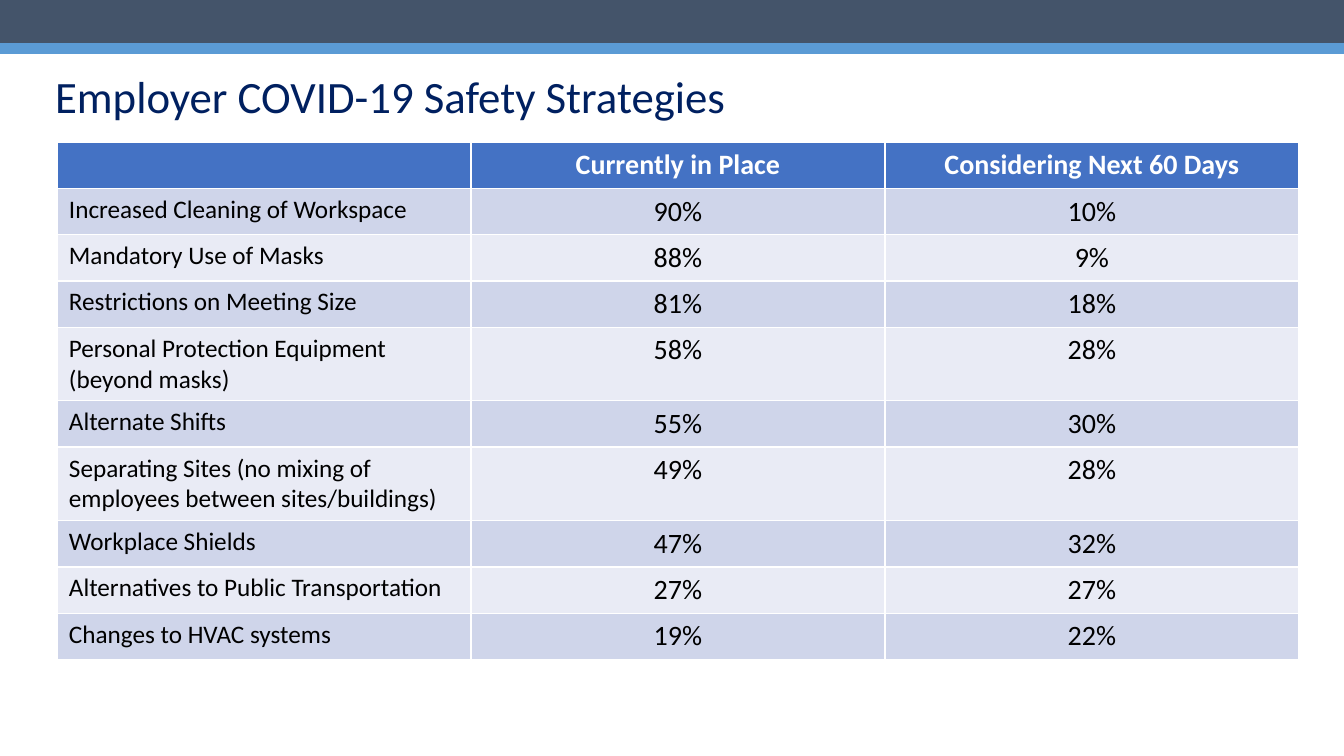
from pptx import Presentation
from pptx.dml.color import RGBColor
from pptx.enum.shapes import MSO_SHAPE
from pptx.enum.text import MSO_ANCHOR, PP_ALIGN
from pptx.util import Emu, Pt

FONT = "Calibri"
SLATE = RGBColor(0x44, 0x54, 0x6A)
SKY = RGBColor(0x5B, 0x9B, 0xD5)
NAVY = RGBColor(0x00, 0x20, 0x60)
HEADER = RGBColor(0x44, 0x72, 0xC4)
BAND_DARK = RGBColor(0xCF, 0xD5, 0xEA)
BAND_LIGHT = RGBColor(0xE9, 0xEB, 0xF5)
WHITE = RGBColor(0xFF, 0xFF, 0xFF)
BLACK = RGBColor(0x00, 0x00, 0x00)

ROWS = [
    ("", "Currently in Place", "Considering Next 60 Days"),
    ("Increased Cleaning of Workspace", "90%", "10%"),
    ("Mandatory Use of Masks", "88%", "9%"),
    ("Restrictions on Meeting Size", "81%", "18%"),
    ("Personal Protection Equipment (beyond masks)", "58%", "28%"),
    ("Alternate Shifts", "55%", "30%"),
    ("Separating Sites (no mixing of employees between sites/buildings)", "49%", "28%"),
    ("Workplace Shields", "47%", "32%"),
    ("Alternatives to Public Transportation", "27%", "27%"),
    ("Changes to HVAC systems", "19%", "22%"),
]
TWO_LINE_ROWS = (4, 6)


def px(n):
    return Emu(round(n * 914400 / 100.8))


def add_run(p, text, size, color, bold=False):
    r = p.add_run()
    r.text = text
    r.font.name = FONT
    r.font.size = Pt(size)
    r.font.bold = bold
    r.font.color.rgb = color


prs = Presentation()
prs.slide_width, prs.slide_height = px(1344), px(756)
s = prs.slides.add_slide(prs.slide_layouts[5])

# Top bands
for top, height, color in ((0, 43, SLATE), (43, 11, SKY)):
    band = s.shapes.add_shape(MSO_SHAPE.RECTANGLE, 0, px(top), px(1344), px(height))
    band.shadow.inherit = False
    band.fill.solid()
    band.fill.fore_color.rgb = color
    band.line.fill.background()

# Title
title = s.shapes.title
title.left, title.top, title.width, title.height = px(45), px(26), px(1344), px(146)
tf = title.text_frame
tf.vertical_anchor = MSO_ANCHOR.MIDDLE
p = tf.paragraphs[0]
p.alignment = PP_ALIGN.LEFT
p.line_spacing = 0.9
add_run(p, "Employer COVID-19 Safety Strategies", 32, NAVY)

# Strategy table
heights = [73 if i in TWO_LINE_ROWS else 45 for i in range(len(ROWS))]
table = s.shapes.add_table(len(ROWS), 3, px(57), px(142), px(1242), px(sum(heights))).table
for column in table.columns:
    column.width = px(414)

for i, row in enumerate(ROWS):
    table.rows[i].height = px(heights[i])
    is_header = i == 0
    fill = HEADER if is_header else (BAND_LIGHT, BAND_DARK)[i % 2]
    for j, text in enumerate(row):
        cell = table.cell(i, j)
        cell.fill.solid()
        cell.fill.fore_color.rgb = fill
        cell.margin_left = cell.margin_right = px(12)
        cell.margin_top = cell.margin_bottom = px(6)
        if text:
            p = cell.text_frame.paragraphs[0]
            p.alignment = PP_ALIGN.CENTER if j else PP_ALIGN.LEFT
            add_run(p, text, 20 if j else 18, WHITE if is_header else BLACK, is_header)

prs.save("out.pptx")
